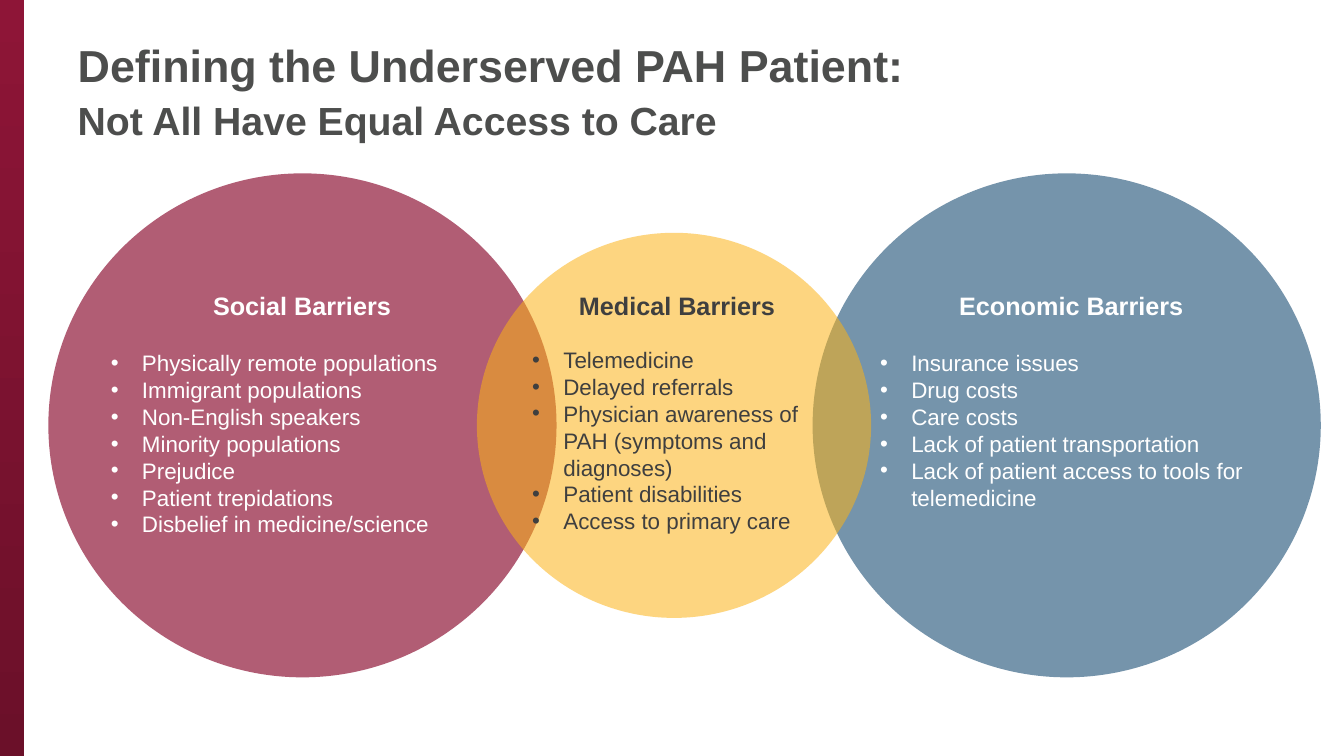
import pptx
import pptx.util
import pptx.dml.color
import pptx.enum.shapes
import pptx.enum.text
from lxml import etree

Inches, Pt = pptx.util.Inches, pptx.util.Pt
RGB = pptx.dml.color.RGBColor
SHAPE = pptx.enum.shapes.MSO_SHAPE
ALIGN = pptx.enum.text.PP_ALIGN

MAROON = RGB(0x8E, 0x15, 0x37)
DARK_MAROON = RGB(0x6B, 0x10, 0x29)
NAVY = RGB(0x00, 0x3A, 0x64)
GOLD = RGB(0xFC, 0xB3, 0x15)
GREY = RGB(0x4D, 0x4E, 0x4D)
CHARCOAL = RGB(0x3F, 0x3F, 0x3F)
WHITE = RGB(0xFF, 0xFF, 0xFF)

FONT = "Arial"
WIDTH, HEIGHT = 13.33, 7.5
TEXT_TOP = 2.83
INDENT = 0.31

TITLE = [("Defining the Underserved PAH Patient:", 32),
         ("Not All Have Equal Access to Care", 28)]

# left, top, width, height, colour, opacity in percent
CIRCLES = [
    (0.48, 1.72, 5.04, 5, MAROON, 69),
    (8.06, 1.72, 5.04, 5, NAVY, 54),
    (4.73, 2.31, 3.91, 3.82, GOLD, 54),
]

# heading, left, width, height, colour, points below the heading, bullets
BARRIERS = [
    ("Social Barriers", 1, 3.99, 3.2, WHITE, 20.7,
     ["Physically remote populations", "Immigrant populations",
      "Non-English speakers", "Minority populations", "Prejudice",
      "Patient trepidations", "Disbelief in medicine/science"]),
    ("Economic Barriers", 8.63, 3.99, 2.63, WHITE, 20.7,
     ["Insurance issues", "Drug costs", "Care costs",
      "Lack of patient transportation",
      "Lack of patient access to tools for telemedicine"]),
    ("Medical Barriers", 5.18, 3.07, 2.56, CHARCOAL, 18.4,
     ["Telemedicine", "Delayed referrals",
      "Physician awareness of PAH (symptoms and diagnoses)",
      "Patient disabilities", "Access to primary care"]),
]


def add_child(parent, tag, **attributes):
    """Append a DrawingML element to parent."""
    return etree.SubElement(parent, pptx.oxml.ns.qn(tag), attributes)


def place(shape, *box):
    shape.left, shape.top, shape.width, shape.height = map(Inches, box)


def format_runs(p, size, color, bold):
    for r in p.runs:
        r.font.name = FONT
        r.font.size = Pt(size)
        r.font.bold = bold
        r.font.color.rgb = color


def add_bullet(p):
    pPr = p._p.get_or_add_pPr()
    pPr.set("marL", str(Inches(INDENT)))
    pPr.set("indent", str(-Inches(INDENT)))
    add_child(pPr, "a:buFont", typeface=FONT)
    add_child(pPr, "a:buChar", char="•")


def add_plain_shape(s, kind, *box):
    shape = s.shapes.add_shape(kind, *map(Inches, box))
    shape.shadow.inherit = False
    shape.line.fill.background()
    return shape


def add_side_band(s):
    band = add_plain_shape(s, SHAPE.RECTANGLE, -0.01, 0, 0.25, HEIGHT)
    band.fill.gradient()
    band.fill.gradient_angle = 270
    for stop, color, position in zip(band.fill.gradient_stops,
                                     (MAROON, DARK_MAROON), (0, 1)):
        stop.color.rgb = color
        stop.position = position


def add_title(s):
    title = s.shapes.title
    place(title, 0.67, 0.22, 11.75, 1.3)
    tf = title.text_frame
    tf.text = "\n".join(text for text, size in TITLE)
    tf.auto_size = pptx.enum.text.MSO_AUTO_SIZE.NONE
    tf.vertical_anchor = pptx.enum.text.MSO_ANCHOR.MIDDLE
    for p, (text, size) in zip(tf.paragraphs, TITLE):
        p.alignment = ALIGN.LEFT
        p.line_spacing = 1.1
        format_runs(p, size, GREY, True)


def add_circle(s, left, top, width, height, color, opacity):
    circle = add_plain_shape(s, SHAPE.OVAL, left, top, width, height)
    circle.fill.solid()
    circle.fill.fore_color.rgb = color
    srgb = circle.fill._xPr.find(".//" + pptx.oxml.ns.qn("a:srgbClr"))
    add_child(srgb, "a:alpha", val=str(opacity * 1000))


def add_barriers(s, heading, left, width, height, color, gap, bullets):
    box = s.shapes.add_textbox(*map(Inches, (left, TEXT_TOP, width, height)))
    tf = box.text_frame
    tf.word_wrap = True
    tf.text = "\n".join([heading] + bullets)
    head, *items = tf.paragraphs
    head.alignment = ALIGN.CENTER
    head.space_after = Pt(gap)
    format_runs(head, 18, color, True)
    for p in items:
        add_bullet(p)
        format_runs(p, 16, color, False)


def main():
    prs = pptx.Presentation()
    prs.slide_width, prs.slide_height = Inches(WIDTH), Inches(HEIGHT)
    s = prs.slides.add_slide(prs.slide_layouts.get_by_name("Title Only"))
    add_side_band(s)
    add_title(s)
    for circle in CIRCLES:
        add_circle(s, *circle)
    for barriers in BARRIERS:
        add_barriers(s, *barriers)
    prs.save("out.pptx")


if __name__ == "__main__":
    main()
